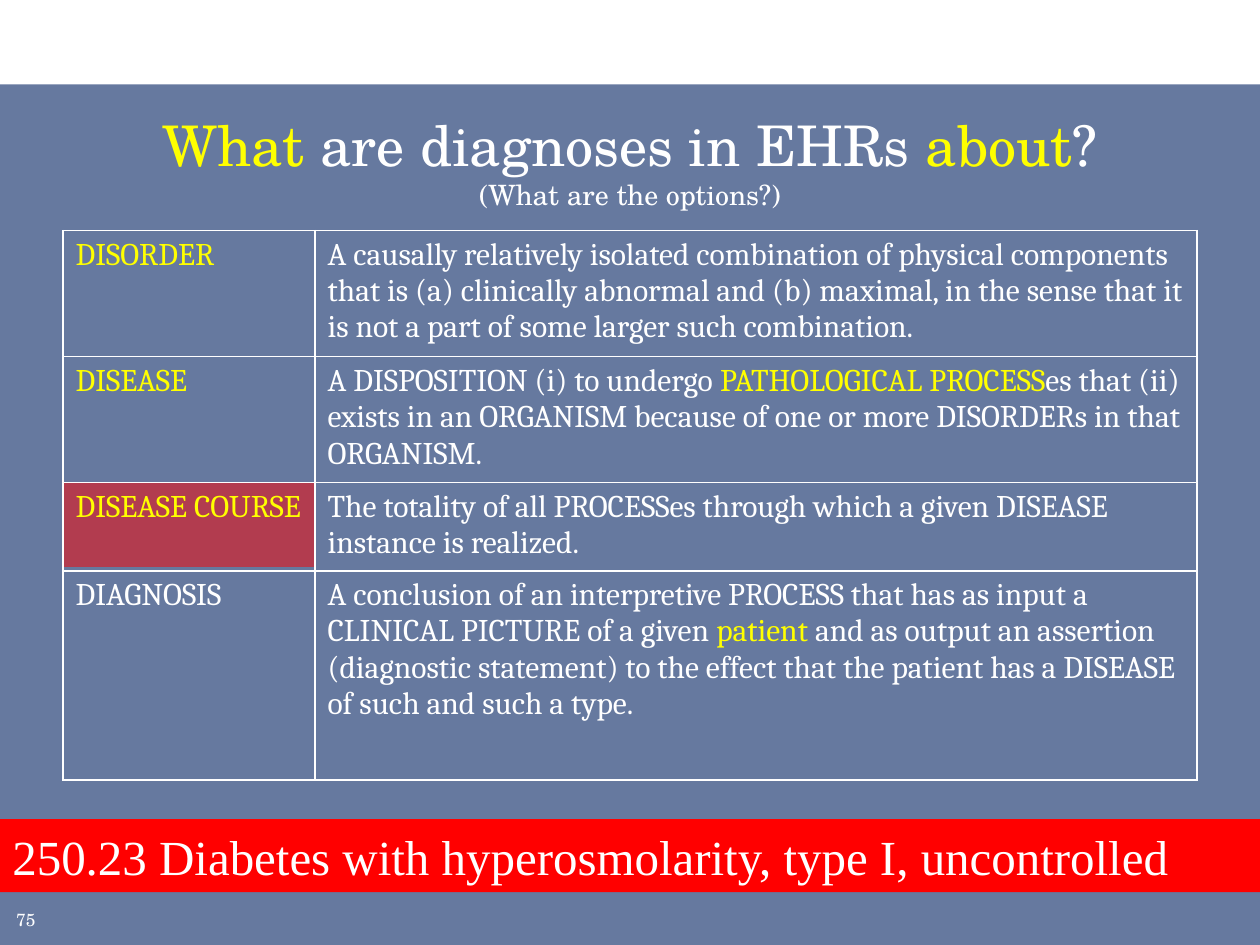
from lxml import etree
from pptx import Presentation
from pptx.dml.color import RGBColor
from pptx.enum.shapes import MSO_SHAPE
from pptx.enum.text import MSO_ANCHOR, PP_ALIGN
from pptx.oxml.ns import qn
from pptx.util import Inches, Pt

RECTANGLE = MSO_SHAPE.RECTANGLE
TOP, MIDDLE = MSO_ANCHOR.TOP, MSO_ANCHOR.MIDDLE
LEFT, CENTER = PP_ALIGN.LEFT, PP_ALIGN.CENTER

WHITE, YELLOW, RED, NAVY = "FFFFFF", "FFFF00", "FF0000", "002060"
SERIF, BODY, BANNER = "TeX Gyre Schola", "Cambria", "Times New Roman"

COLUMN_WIDTHS = [2, 7]
ROW_HEIGHTS = [0.99, 1, 0.69, 1.66]
DEFINITIONS = [
    ([("DISORDER", YELLOW)],
     [("A causally relatively isolated combination of physical components "
       "that is (a) clinically abnormal and (b) maximal, in the sense that it "
       "is not a part of some larger such combination.", WHITE)]),
    ([("DISEASE", YELLOW)],
     [("A DISPOSITION (i) to undergo ", WHITE),
      ("PATHOLOGICAL PROCESS", YELLOW),
      ("es that (ii) exists in an ORGANISM because of one or more DISORDERs "
       "in that ORGANISM.", WHITE)]),
    ([("DISEASE COURSE", YELLOW)],
     [("The totality of all PROCESSes through which a given DISEASE "
       "instance is realized.", WHITE)]),
    ([("DIAGNOSIS", WHITE)],
     [("A conclusion of an interpretive PROCESS that has as input a CLINICAL "
       "PICTURE of a given ", WHITE),
      ("patient", YELLOW),
      (" and as output an assertion (diagnostic statement) to the effect that "
       "the patient has a DISEASE of such and such a type.", WHITE)]),
]


def rgb(color):
    return RGBColor.from_string(color)


def write(paragraph, parts, font, size, align=LEFT):
    paragraph.alignment = align
    paragraph.font.name = font
    paragraph.font.size = Pt(size)
    for text, color in parts:
        run = paragraph.add_run()
        run.text = text
        run.font.color.rgb = rgb(color)


def add_block(slide, box, color, opacity=100):
    block = slide.shapes.add_shape(RECTANGLE, *map(Inches, box))
    block.shadow.inherit = False
    block.line.fill.background()
    block.fill.solid()
    block.fill.fore_color.rgb = rgb(color)
    if opacity < 100:
        tint = block.fill._xPr.find(".//" + qn("a:srgbClr"))
        etree.SubElement(tint, qn("a:alpha"), val=str(opacity * 1000))
    return block


def add_label(slide, box, anchor):
    frame = slide.shapes.add_textbox(*map(Inches, box)).text_frame
    frame.word_wrap = True
    frame.vertical_anchor = anchor
    return frame


def add_title(slide):
    frame = add_label(slide, (0.25, 0.83, 9.5, 0.83), TOP)
    heading = frame.paragraphs[0]
    write(heading, [("What", YELLOW), (" are diagnoses in EHRs ", WHITE),
                    ("about", YELLOW), ("?", WHITE)], SERIF, 32, CENTER)
    write(frame.add_paragraph(), [("(What are the options?)", WHITE)],
          SERIF, 16, CENTER)


def outline(cell, color, width):
    properties = cell._tc.get_or_add_tcPr()
    for position, side in enumerate(("a:lnL", "a:lnR", "a:lnT", "a:lnB")):
        line = etree.Element(qn(side), w=str(Pt(width)))
        fill = etree.SubElement(line, qn("a:solidFill"))
        etree.SubElement(fill, qn("a:srgbClr"), val=color)
        properties.insert(position, line)


def add_definitions(slide):
    table = slide.shapes.add_table(
        len(DEFINITIONS), len(COLUMN_WIDTHS), Inches(0.5), Inches(1.83),
        Inches(sum(COLUMN_WIDTHS)), Inches(sum(ROW_HEIGHTS))).table
    table.first_row = False
    table.horz_banding = False
    for column, width in zip(table.columns, COLUMN_WIDTHS):
        column.width = Inches(width)
    for row, height, entry in zip(table.rows, ROW_HEIGHTS, DEFINITIONS):
        row.height = Inches(height)
        for cell, parts in zip(row.cells, entry):
            cell.fill.background()
            outline(cell, WHITE, 1)
            write(cell.text_frame.paragraphs[0], parts, BODY, 18)


def add_banner(slide):
    frame = add_block(slide, (0, 6.5, 10, 0.58), RED).text_frame
    frame.word_wrap = True
    frame.vertical_anchor = MIDDLE
    write(frame.paragraphs[0],
          [("250.23 Diabetes with hyperosmolarity, type I, uncontrolled", WHITE)],
          BANNER, 28)


def main():
    deck = Presentation()
    deck.slide_width, deck.slide_height = Inches(10), Inches(7.5)
    slide = deck.slides.add_slide(deck.slide_layouts[6])
    add_block(slide, (0, 0.67, 10, 6.83), NAVY, 60)
    page_number = add_label(slide, (0.03, 7.17, 0.39, 0.25), MIDDLE)
    write(page_number.paragraphs[0], [("75", WHITE)], SERIF, 10)
    add_block(slide, (0.5, 3.83, 2, 0.67), RED, 50)
    add_definitions(slide)
    add_banner(slide)
    add_title(slide)
    deck.save("out.pptx")


if __name__ == "__main__":
    main()
